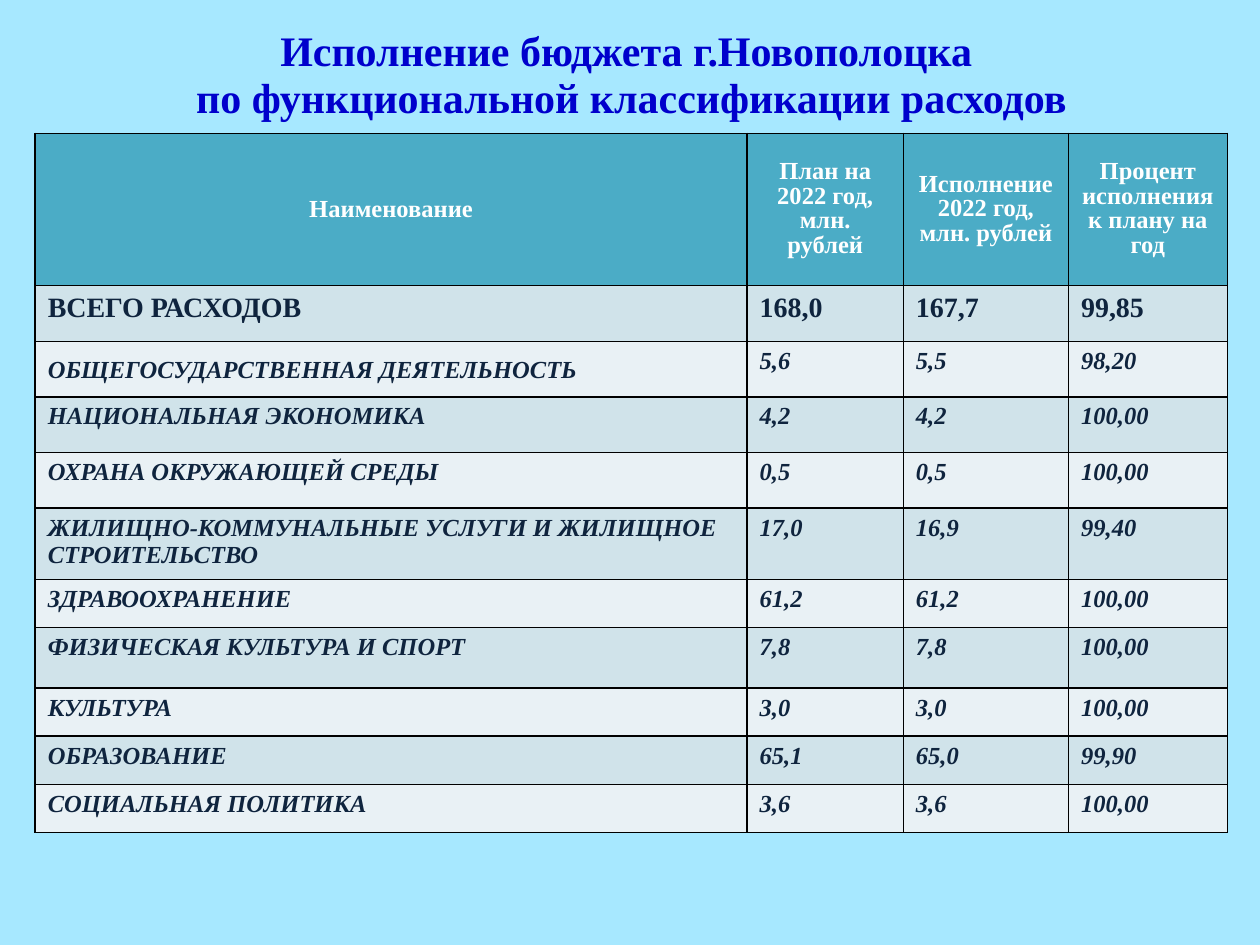
"""Build the slide with the Novopolotsk budget spending table."""
from lxml.etree import SubElement
from pptx import Presentation
from pptx.dml.color import RGBColor
from pptx.enum.text import MSO_ANCHOR, PP_ALIGN
from pptx.oxml.ns import qn
from pptx.util import Cm, Pt

COLORS = {
    "background": "A7E8FF",
    "title": "0000CC",
    "header": "4BACC6",
    "header_text": "FFFFFF",
    "odd_row": "D0E3EA",
    "even_row": "E9F1F5",
    "body_text": "0F243E",
    "border": "000000",
}
FORMATS = {
    "title": {"size": Pt(24), "bold": True, "name": "Times New Roman"},
    "header": {"size": Pt(14), "bold": True, "name": "Times New Roman"},
    "total": {"size": Pt(16), "bold": True, "name": "Times New Roman"},
    "item": {"size": Pt(14), "bold": True, "italic": True, "name": "Times New Roman"},
}
HEADINGS = (
    "Наименование",
    "План на 2022 год, млн. рублей",
    "Исполнение 2022 год, млн. рублей",
    "Процент исполнения к плану на год",
)
SPENDING = [
    ("ВСЕГО РАСХОДОВ", "168,0", "167,7", "99,85"),
    ("ОБЩЕГОСУДАРСТВЕННАЯ ДЕЯТЕЛЬНОСТЬ", "5,6", "5,5", "98,20"),
    ("НАЦИОНАЛЬНАЯ ЭКОНОМИКА", "4,2", "4,2", "100,00"),
    ("ОХРАНА ОКРУЖАЮЩЕЙ СРЕДЫ", "0,5", "0,5", "100,00"),
    ("ЖИЛИЩНО-КОММУНАЛЬНЫЕ УСЛУГИ И ЖИЛИЩНОЕ СТРОИТЕЛЬСТВО", "17,0", "16,9", "99,40"),
    ("ЗДРАВООХРАНЕНИЕ", "61,2", "61,2", "100,00"),
    ("ФИЗИЧЕСКАЯ КУЛЬТУРА И СПОРТ", "7,8", "7,8", "100,00"),
    ("КУЛЬТУРА", "3,0", "3,0", "100,00"),
    ("ОБРАЗОВАНИЕ", "65,1", "65,0", "99,90"),
    ("СОЦИАЛЬНАЯ ПОЛИТИКА", "3,6", "3,6", "100,00"),
]
COLUMN_WIDTHS = [14.35, 3.15, 3.33, 3.2]
ROW_HEIGHTS = [3.07] + [1.12] * 5 + [0.97, 1.22] + [0.97] * 3


def write(frame, text, kind, color):
    paragraph = frame.paragraphs[0]
    paragraph.text = text
    for run in paragraph.runs:
        for attribute, value in FORMATS[kind].items():
            setattr(run.font, attribute, value)
        run.font.color.rgb = RGBColor.from_string(COLORS[color])
    return paragraph


def add_borders(cell):
    properties = cell._tc.get_or_add_tcPr()
    for side in ("lnL", "lnR", "lnT", "lnB"):
        line = SubElement(properties, qn(f"a:{side}"), w=str(Pt(1)))
        solid = SubElement(line, qn("a:solidFill"))
        SubElement(solid, qn("a:srgbClr"), val=COLORS["border"])


presentation = Presentation()
presentation.slide_width, presentation.slide_height = Cm(25.4), Cm(19.05)
slide = presentation.slides.add_slide(presentation.slide_layouts[6])
slide.background.fill.solid()
slide.background.fill.fore_color.rgb = RGBColor.from_string(COLORS["background"])

title = slide.shapes.add_textbox(Cm(1.3), Cm(0.33), Cm(22.86), Cm(2.36)).text_frame
title.word_wrap = True
title.vertical_anchor = MSO_ANCHOR.MIDDLE
heading = write(
    title,
    "Исполнение бюджета г.Новополоцка \vпо функциональной классификации расходов",
    "title",
    "title",
)
heading.alignment = PP_ALIGN.CENTER
heading.line_spacing = Pt(27)

budget = slide.shapes.add_table(
    len(ROW_HEIGHTS), len(COLUMN_WIDTHS),
    Cm(0.71), Cm(2.69), Cm(sum(COLUMN_WIDTHS)), Cm(sum(ROW_HEIGHTS)),
).table
for column, width in zip(budget.columns, COLUMN_WIDTHS):
    column.width = Cm(width)
for row, height in zip(budget.rows, ROW_HEIGHTS):
    row.height = Cm(height)

for row_number, values in enumerate([HEADINGS] + SPENDING):
    kind = {0: "header", 1: "total"}.get(row_number, "item")
    band = "odd_row" if row_number % 2 else "even_row"
    fill, ink = ("header", "header_text") if kind == "header" else (band, "body_text")
    for column_number, value in enumerate(values):
        cell = budget.cell(row_number, column_number)
        add_borders(cell)
        cell.fill.solid()
        cell.fill.fore_color.rgb = RGBColor.from_string(COLORS[fill])
        entry = write(cell.text_frame, value, kind, ink)
        if kind == "header":
            cell.vertical_anchor = MSO_ANCHOR.MIDDLE
            entry.alignment = PP_ALIGN.CENTER
            if column_number:
                entry.line_spacing = Pt(14)

government = budget.cell(2, 0)
government.vertical_anchor = MSO_ANCHOR.MIDDLE
government.margin_top, government.margin_bottom = Cm(0.03), Cm(0)

presentation.save("out.pptx")
